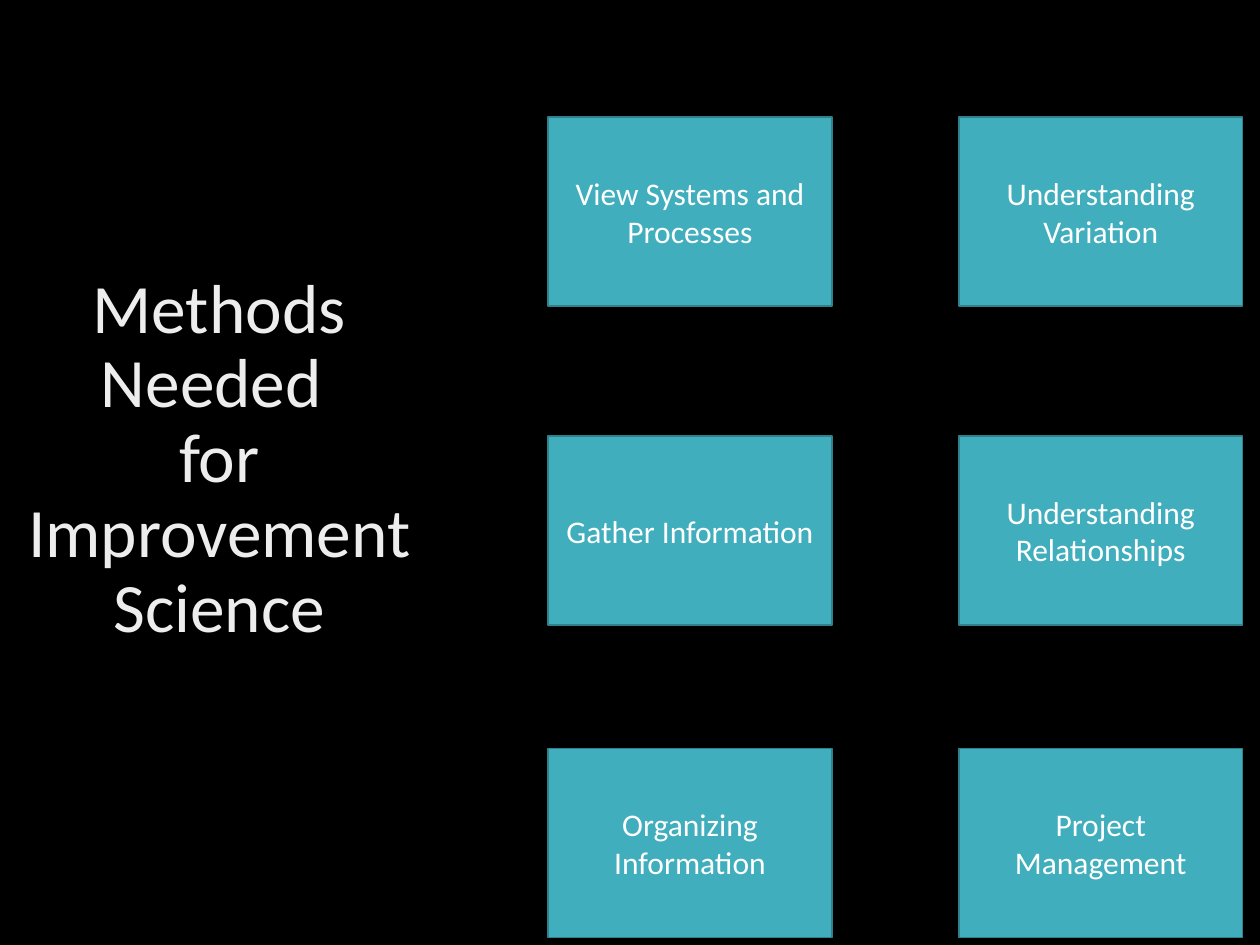
from pptx import Presentation
from pptx.dml.color import RGBColor
from pptx.enum.shapes import MSO_SHAPE
from pptx.enum.text import MSO_ANCHOR, PP_ALIGN
from pptx.util import Cm, Pt

RECTANGLE = MSO_SHAPE.RECTANGLE
MIDDLE = MSO_ANCHOR.MIDDLE
CENTER = PP_ALIGN.CENTER

BLACK = RGBColor(0x00, 0x00, 0x00)
WHITE = RGBColor(0xFF, 0xFF, 0xFF)
PALE_GRAY = RGBColor(0xED, 0xED, 0xED)
TEAL = RGBColor(0x41, 0xAE, 0xBD)
DARK_TEAL = RGBColor(0x30, 0x81, 0x8C)

TITLE = "Methods\vNeeded \vfor\vImprovement\vScience"
TITLE_FONT = {"name": "Calibri", "size": Pt(39.6)}
METHOD_FONT = {"name": "Calibri", "size": Pt(18)}

COLUMN_LEFTS = (11.05, 19.33)
ROW_TOPS = (2.36, 8.79, 15.09)
METHODS = (
    ("View Systems and Processes", "Understanding Variation"),
    ("Gather Information", "Understanding Relationships"),
    ("Organizing Information", "Project Management"),
)


def write_text(box, text, font_format, color, line_spacing=1.0):
    frame = box.text_frame
    frame.word_wrap = True
    frame.vertical_anchor = MIDDLE
    para = frame.paragraphs[0]
    para.text = text
    para.alignment = CENTER
    para.line_spacing = line_spacing
    for span in para.runs:
        for name, value in font_format.items():
            setattr(span.font, name, value)
        span.font.color.rgb = color


def add_title(page):
    box = page.shapes.add_textbox(Cm(0), Cm(7.44), Cm(8.84), Cm(3.68))
    write_text(box, TITLE, TITLE_FONT, PALE_GRAY, 0.9)


def add_method(page, left, top, text):
    box = page.shapes.add_shape(RECTANGLE, Cm(left), Cm(top), Cm(5.72), Cm(3.81))
    box.shadow.inherit = False
    box.fill.solid()
    box.fill.fore_color.rgb = TEAL
    box.line.color.rgb = DARK_TEAL
    box.line.width = Pt(1)
    write_text(box, text, METHOD_FONT, WHITE)


def main():
    deck = Presentation()
    deck.slide_width, deck.slide_height = Cm(25.4), Cm(19.05)
    page = deck.slides.add_slide(deck.slide_layouts[6])
    page.background.fill.solid()
    page.background.fill.fore_color.rgb = BLACK
    add_title(page)
    for top, row in zip(ROW_TOPS, METHODS):
        for left, text in zip(COLUMN_LEFTS, row):
            add_method(page, left, top, text)
    deck.save("out.pptx")


if __name__ == "__main__":
    main()
